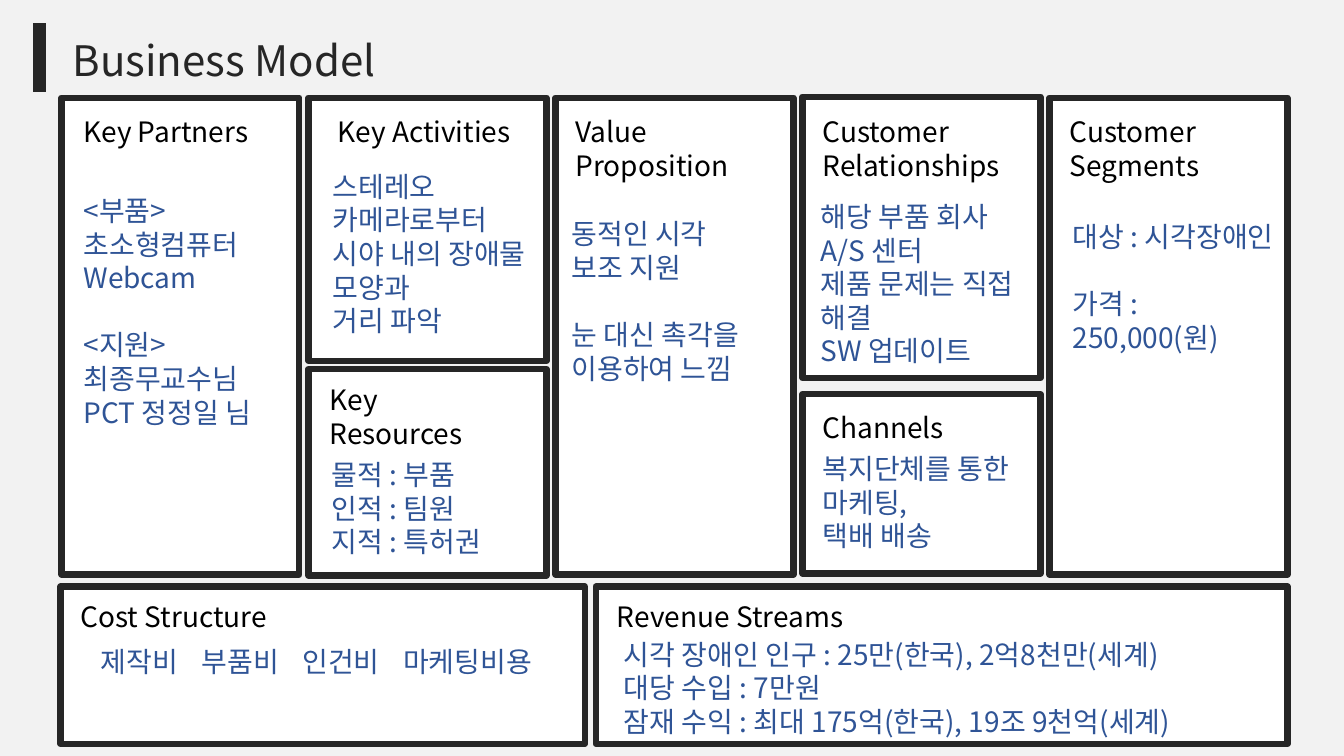
from lxml import etree
from pptx import Presentation
from pptx.dml.color import RGBColor
from pptx.enum import shapes, text
from pptx.oxml import ns
from pptx.util import Inches, Pt

FONT = "Noto Sans CJK KR"
COLORS = {"page": "F2F2F2", "frame": "262626", "card": "FFFFFF", "heading": "000000", "body": "2F5496"}
PALETTE = {name: RGBColor.from_string(value) for name, value in COLORS.items()}


def write(box, lines, size, color, margins):
    frame = box.text_frame
    settings = {
        "word_wrap": True,
        "auto_size": text.MSO_AUTO_SIZE.NONE,
        "vertical_anchor": text.MSO_ANCHOR.TOP,
        "margin_left": Inches(margins[0]),
        "margin_top": Inches(margins[1]),
        "margin_right": Inches(0.1),
        "margin_bottom": Inches(margins[1]),
    }
    for name, value in settings.items():
        setattr(frame, name, value)
    gap = False
    for line in lines:
        if line is None:
            gap = True
            continue
        para = frame.add_paragraph() if frame.text else frame.paragraphs[0]
        para.alignment = text.PP_ALIGN.LEFT
        para.space_before = Pt(24 if gap else 0)
        gap = False
        span = para.add_run()
        span.text = line
        for name, value in {"name": FONT, "size": Pt(size)}.items():
            setattr(span.font, name, value)
        span.font.color.rgb = PALETTE[color]
        etree.SubElement(span.font._element, ns.qn("a:ea"), typeface=FONT)


deck = Presentation()
deck.slide_width, deck.slide_height = Inches(13.33), Inches(7.5)
page = deck.slides.add_slide(deck.slide_layouts[5])
page.background.fill.solid()
page.background.fill.fore_color.rgb = PALETTE["page"]

bar = page.shapes.add_connector(
    shapes.MSO_CONNECTOR.STRAIGHT, Inches(0.39), Inches(0.23), Inches(0.39), Inches(0.91)
)
bar.line.width = Pt(9)
bar.line.color.rgb = PALETTE["frame"]
etree.SubElement(bar.line._get_or_add_ln().getparent(), ns.qn("a:effectLst"))

title = page.shapes.title
for name, value in {"left": 0.5, "top": 0.24, "width": 5.7, "height": 0.67}.items():
    setattr(title, name, Inches(value))
write(title, ["Business Model"], 30, "frame", (0.22, 0.1))

columns = [0.61 + 2.45 * index for index in range(5)]
cards = [
    (columns[0], 0.97, 2.36, 4.73),
    (columns[1], 0.97, 2.36, 2.61),
    (columns[1], 3.66, 2.36, 2.05),
    (columns[2], 0.97, 2.36, 4.73),
    (columns[3], 0.96, 2.36, 2.79),
    (columns[3], 3.91, 2.36, 1.78),
    (columns[4], 0.97, 2.36, 4.73),
    (5.91, 5.82, 6.86, 1.56),
    (0.6, 5.82, 5.2, 1.56),
]
for bounds in cards:
    card = page.shapes.add_shape(shapes.MSO_SHAPE.RECTANGLE, *map(Inches, bounds))
    card.shadow.inherit = False
    card.fill.solid()
    card.fill.fore_color.rgb = PALETTE["card"]
    card.line.width = Pt(4.5)
    card.line.color.rgb = PALETTE["frame"]

headings = [
    ("Key Partners", 0.73, 1.09, 1.97, 0.44),
    ("Key Activities", 3.25, 1.09, 1.97, 0.44),
    ("Key Resources", 3.17, 3.75, 1.97, 0.77),
    ("Value Proposition", 5.61, 1.09, 1.97, 0.77),
    ("Customer Relationships", 8.06, 1.09, 1.97, 0.77),
    ("Channels", 8.06, 4.02, 1.97, 0.44),
    ("Customer Segments", 10.51, 1.09, 1.97, 0.77),
    ("Revenue Streams", 6.02, 5.9, 2.62, 0.44),
    ("Cost Structure", 0.7, 5.9, 2.17, 0.44),
]
bodies = [
    (["<부품>", "초소형컴퓨터", "Webcam", None, "<지원>", "최종무교수님", "PCT 정정일 님"], 0.73, 1.87, 2.14, 2.79),
    (["스테레오 카메라로부터 시야 내의 장애물 모양과", "거리 파악"], 3.2, 1.63, 2.21, 1.78),
    (["물적 : 부품", "인적 : 팀원", "지적 : 특허권"], 3.19, 4.49, 1.97, 1.11),
    (["동적인 시각", "보조 지원", None, "눈 대신 촉각을 이용하여 느낌"], 5.57, 2.1, 2.12, 2.11),
    (["해당 부품 회사 A/S 센터", "제품 문제는 직접 해결", "SW 업데이트"], 8.04, 1.93, 2.19, 1.62),
    (["복지단체를 통한 마케팅,", "택배 배송"], 8.06, 4.43, 2.26, 1.11),
    (["대상 : 시각장애인", None, "가격 :", "250,000(원)"], 10.54, 2.13, 2.24, 1.78),
    (["제작비\t부품비\t인건비\t마케팅비용"], 0.9, 6.34, 4.78, 0.77),
    (
        ["시각 장애인 인구 : 25만(한국), 2억8천만(세계)", "대당 수입 : 7만원", "잠재 수익 : 최대 175억(한국), 19조 9천억(세계)"],
        6.09, 6.27, 6.68, 1.11,
    ),
]
entries = [("heading", [words], bounds) for words, *bounds in headings]
entries += [("body", lines, bounds) for lines, *bounds in bodies]
for color, lines, bounds in entries:
    box = page.shapes.add_textbox(*map(Inches, bounds))
    write(box, lines, 20, color, (0.1, 0.05))

deck.save("out.pptx")
